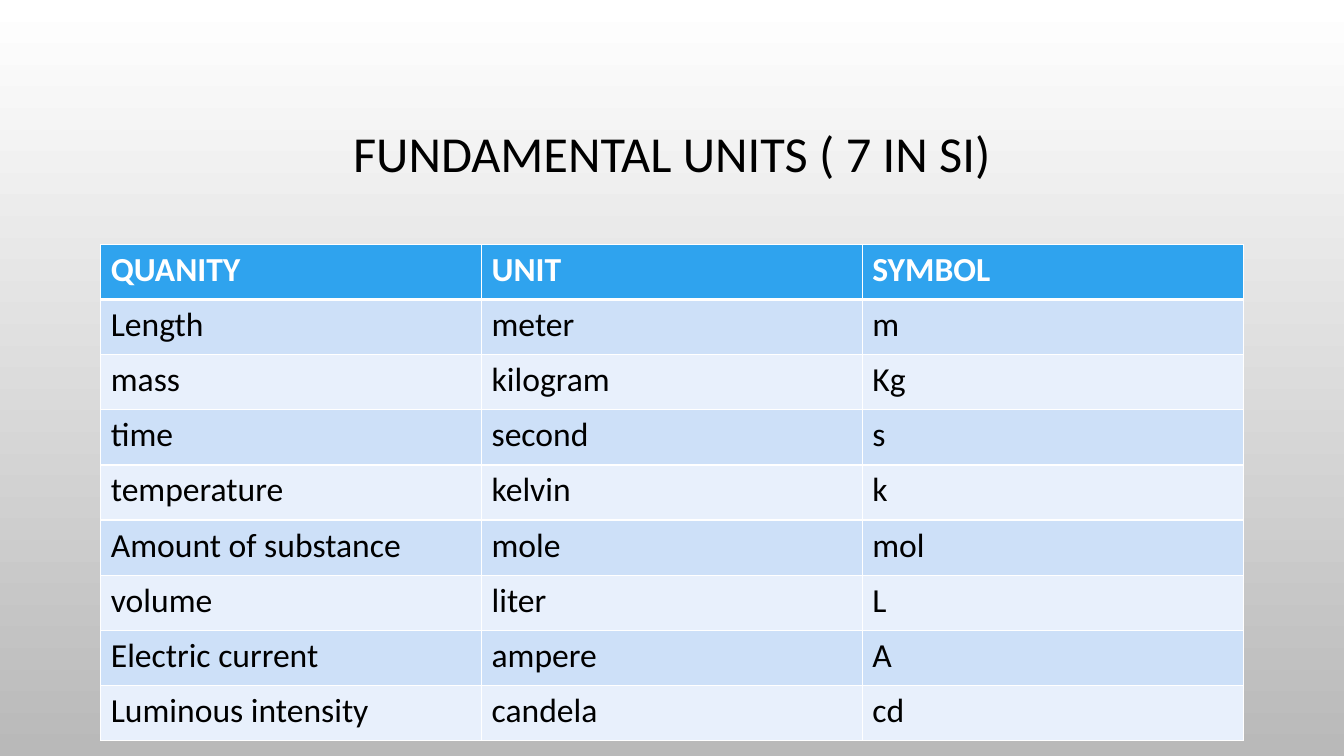
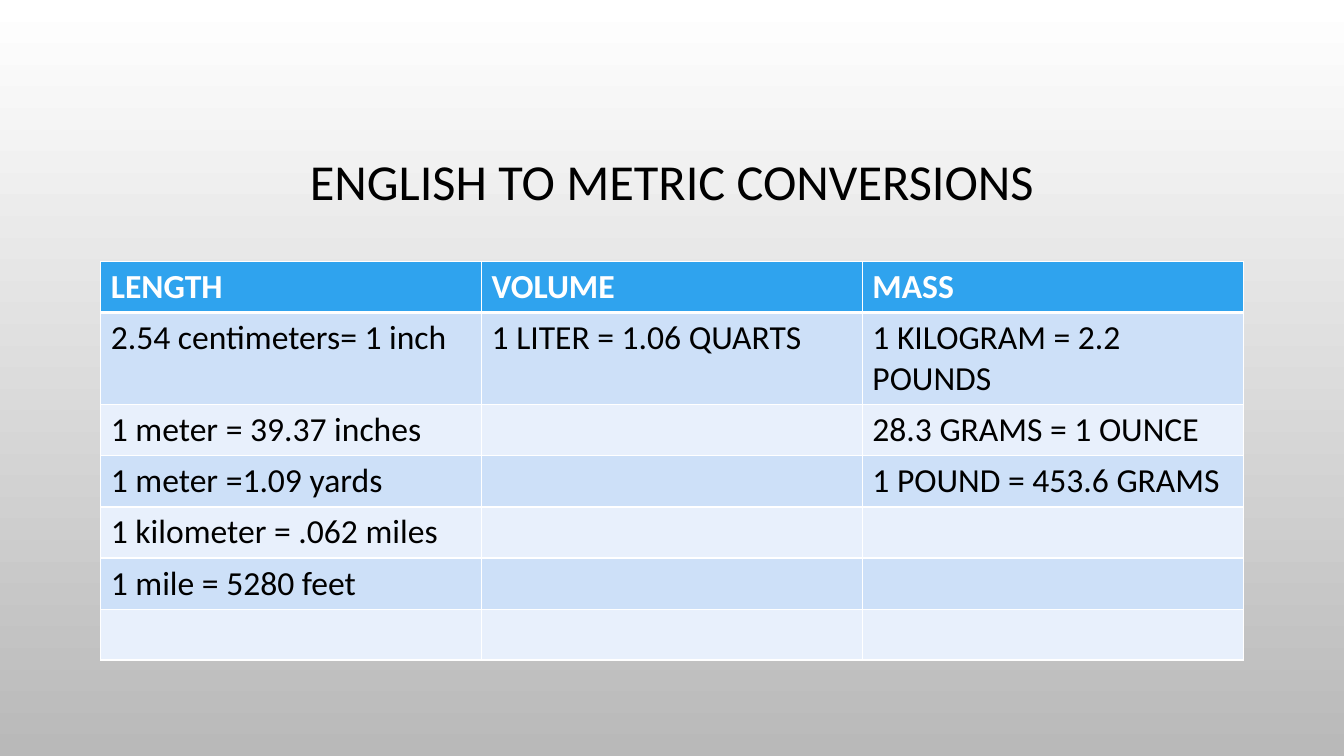
from lxml import etree
from pptx import Presentation
from pptx.dml.color import RGBColor
from pptx.enum.text import MSO_ANCHOR, MSO_AUTO_SIZE, PP_ALIGN
from pptx.oxml.ns import qn
from pptx.util import Cm, Pt

WHITE = RGBColor(0xFF, 0xFF, 0xFF)
BLACK = RGBColor(0x00, 0x00, 0x00)
GREY = RGBColor(0xB9, 0xB9, 0xB9)
HEADER_BLUE = RGBColor(0x2F, 0xA3, 0xEE)
BANDS = (RGBColor(0xE8, 0xF0, 0xFC), RGBColor(0xCD, 0xE0, 0xF8))
FONT = "Calibri"
LEFT, WIDTH = Cm(2.54), Cm(28.79)

# Content: lengths are in centimetres
SLIDES = [
    {
        "title": "FUNDAMENTAL UNITS ( 7 IN SI)",
        "title_inset": 0.13,
        "table_top": 6.16,
        "row_height": 1.39,
        "rows": [
            ("QUANITY", "UNIT", "SYMBOL"),
            ("Length", "meter", "m"),
            ("mass", "kilogram", "Kg"),
            ("time", "second", "s"),
            ("temperature", "kelvin", "k"),
            ("Amount of substance", "mole", "mol"),
            ("volume", "liter", "L"),
            ("Electric current", "ampere", "A"),
            ("Luminous intensity", "candela", "cd"),
        ],
    },
    {
        "title": "ENGLISH TO METRIC CONVERSIONS",
        "title_inset": 1.5,
        "table_top": 6.59,
        "row_height": 1.28,
        "rows": [
            ("LENGTH", "VOLUME", "MASS"),
            ("2.54 centimeters= 1 inch", "1 LITER = 1.06 QUARTS", "1 KILOGRAM = 2.2 POUNDS"),
            ("1 meter = 39.37 inches", "", "28.3 GRAMS = 1 OUNCE"),
            ("1 meter =1.09 yards", "", "1 POUND = 453.6 GRAMS"),
            ("1 kilometer = .062 miles", "", ""),
            ("1 mile = 5280 feet", "", ""),
            ("", "", ""),
        ],
    },
]


def style_font(font, size, color, bold=False):
    font.name, font.size, font.bold = FONT, Pt(size), bold
    font.color.rgb = color


def set_background(master):
    fill = master.background.fill
    fill.gradient()
    fill.gradient_angle = 270
    for stop, color, position in zip(fill.gradient_stops, (WHITE, GREY), (0, 1)):
        stop.color.rgb = color
        stop.position = position


def set_title(page, text, inset):
    title = page.shapes.title
    title.left, title.top, title.width, title.height = LEFT, Cm(1.73), WIDTH, Cm(4.43)
    frame = title.text_frame
    frame.text = text
    frame.auto_size = MSO_AUTO_SIZE.NONE
    frame.vertical_anchor = MSO_ANCHOR.MIDDLE
    frame.margin_top = Cm(inset)
    para = frame.paragraphs[0]
    para.alignment = PP_ALIGN.CENTER
    para.line_spacing = 0.9
    style_font(para.runs[0].font, 36, BLACK)


def set_borders(cell, bottom):
    properties = cell._tc.get_or_add_tcPr()
    for side, points in (("lnL", 1), ("lnR", 1), ("lnT", 1), ("lnB", bottom)):
        line = etree.SubElement(properties, qn(f"a:{side}"), w=str(Pt(points)))
        fill = etree.SubElement(line, qn("a:solidFill"))
        etree.SubElement(fill, qn("a:srgbClr"), val=str(WHITE))


def add_units_table(page, rows, top, row_height):
    height = Cm(row_height)
    table = page.shapes.add_table(
        len(rows), len(rows[0]), LEFT, Cm(top), WIDTH, height * len(rows)).table
    for r, texts in enumerate(rows):
        table.rows[r].height = height
        header = r == 0
        for c, text in enumerate(texts):
            cell = table.cell(r, c)
            set_borders(cell, bottom=3 if header else 1)
            cell.fill.solid()
            cell.fill.fore_color.rgb = HEADER_BLUE if header else BANDS[r % 2]
            cell.text_frame.text = text
            for span in cell.text_frame.paragraphs[0].runs:
                style_font(span.font, 24, WHITE if header else BLACK, header)


def main():
    deck = Presentation()
    deck.slide_width, deck.slide_height = Cm(33.87), Cm(19.05)
    set_background(deck.slide_master)
    title_only = deck.slide_layouts[5]
    for content in SLIDES:
        page = deck.slides.add_slide(title_only)
        set_title(page, content["title"], content["title_inset"])
        add_units_table(page, content["rows"], content["table_top"], content["row_height"])
    deck.save("out.pptx")


if __name__ == "__main__":
    main()
